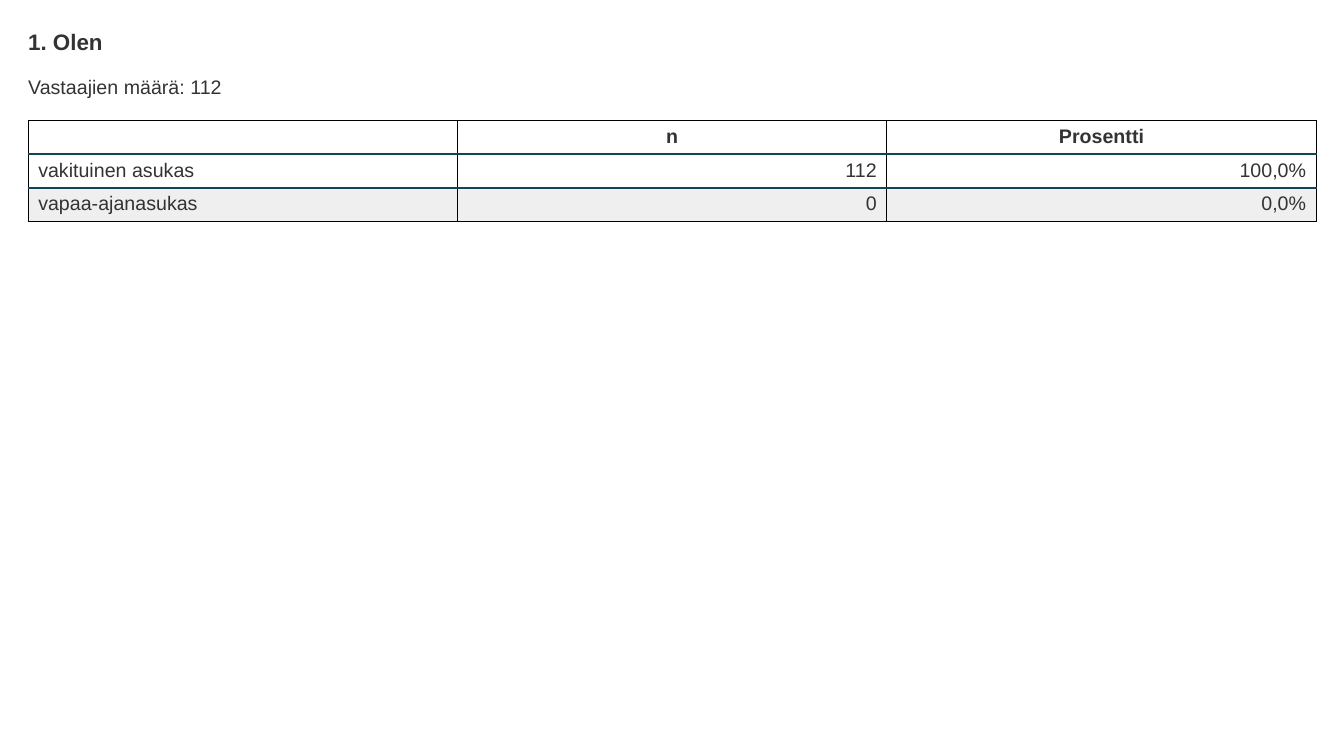
from dataclasses import dataclass

from lxml.etree import SubElement
from pptx import Presentation
from pptx.dml.color import RGBColor
from pptx.enum.text import MSO_ANCHOR, MSO_AUTO_SIZE, PP_ALIGN
from pptx.oxml.ns import qn
from pptx.util import Cm, Pt


@dataclass(frozen=True)
class Theme:
    font: str = "Arial"
    ink: str = "333333"
    grid: str = "000000"
    rule: str = "124456"
    band: str = "EFEFEF"
    title_size: int = 16
    body_size: int = 14
    grid_width: int = 1
    rule_width: int = 2


LEFT, WIDTH = 0.71, 32.46
ROW_HEIGHT = 0.85
HEADER = ("", "n", "Prosentti")
ANSWERS = (
    ("vakituinen asukas", "112", "100,0%"),
    ("vapaa-ajanasukas", "0", "0,0%"),
)


def write(frame, text, *, theme, size, bold=False, align=PP_ALIGN.LEFT):
    paragraph = frame.paragraphs[0]
    paragraph.alignment = align
    if not text:
        # An empty cell still needs the type size, or its row grows.
        SubElement(paragraph._p, qn("a:endParaRPr"), sz=str(size * 100))
        return
    run = paragraph.add_run()
    run.text = text
    run.font.name = theme.font
    run.font.size = Pt(size)
    run.font.bold = bold
    run.font.color.rgb = RGBColor.from_string(theme.ink)


def add_border(cell, side, color, width):
    """Draw one side of a cell: L, R, T or B, called in that order."""
    line = SubElement(cell._tc.get_or_add_tcPr(), qn(f"a:ln{side}"), w=str(Pt(width)))
    fill = SubElement(line, qn("a:solidFill"))
    SubElement(fill, qn("a:srgbClr"), val=color)


class SurveySlide:
    def __init__(self, presentation, theme):
        self.theme = theme
        self.slide = presentation.slides.add_slide(presentation.slide_layouts[5])

    def fit_frame(self, box, top, height):
        box.left, box.top = Cm(LEFT), Cm(top)
        box.width, box.height = Cm(WIDTH), Cm(height)
        frame = box.text_frame
        frame.word_wrap = True
        frame.auto_size = MSO_AUTO_SIZE.NONE
        frame.vertical_anchor = MSO_ANCHOR.TOP
        frame.margin_left = frame.margin_right = 0
        frame.margin_top = frame.margin_bottom = 0
        return frame

    def title(self, text, top, height):
        frame = self.fit_frame(self.slide.shapes.title, top, height)
        write(frame, text, theme=self.theme, size=self.theme.title_size, bold=True)

    def text(self, text, top, height):
        box = self.slide.shapes.add_textbox(Cm(LEFT), Cm(top), Cm(WIDTH), Cm(height))
        frame = self.fit_frame(box, top, height)
        write(frame, text, theme=self.theme, size=self.theme.body_size)

    def table(self, rows, top):
        table = self.slide.shapes.add_table(
            len(rows), len(rows[0]), Cm(LEFT), Cm(top),
            Cm(WIDTH), Cm(ROW_HEIGHT * len(rows)),
        ).table
        table.horz_banding = False
        for row_index, values in enumerate(rows):
            table.rows[row_index].height = Cm(ROW_HEIGHT)
            for column_index, value in enumerate(values):
                cell = table.cell(row_index, column_index)
                self.style_cell(cell, row_index, len(rows) - 1)
                is_header = row_index == 0
                if is_header:
                    align = PP_ALIGN.CENTER
                else:
                    align = PP_ALIGN.RIGHT if column_index else PP_ALIGN.LEFT
                write(cell.text_frame, value, theme=self.theme,
                      size=self.theme.body_size, bold=is_header, align=align)

    def style_cell(self, cell, row_index, last_row):
        """Thin black outer and column lines, heavier rules between rows."""
        theme = self.theme
        grid = (theme.grid, theme.grid_width)
        rule = (theme.rule, theme.rule_width)
        add_border(cell, "L", *grid)
        add_border(cell, "R", *grid)
        add_border(cell, "T", *(rule if row_index > 0 else grid))
        add_border(cell, "B", *(rule if row_index < last_row else grid))
        if row_index and row_index % 2 == 0:
            cell.fill.solid()
            cell.fill.fore_color.rgb = RGBColor.from_string(theme.band)
        else:
            cell.fill.background()


def main():
    presentation = Presentation()
    presentation.slide_width, presentation.slide_height = Cm(33.87), Cm(19.05)
    survey = SurveySlide(presentation, Theme())
    survey.title("1. Olen", top=0.71, height=0.68)
    survey.text("Vastaajien määrä: 112", top=1.9, height=0.6)
    survey.table((HEADER, *ANSWERS), top=3.03)
    presentation.save("out.pptx")


if __name__ == "__main__":
    main()
